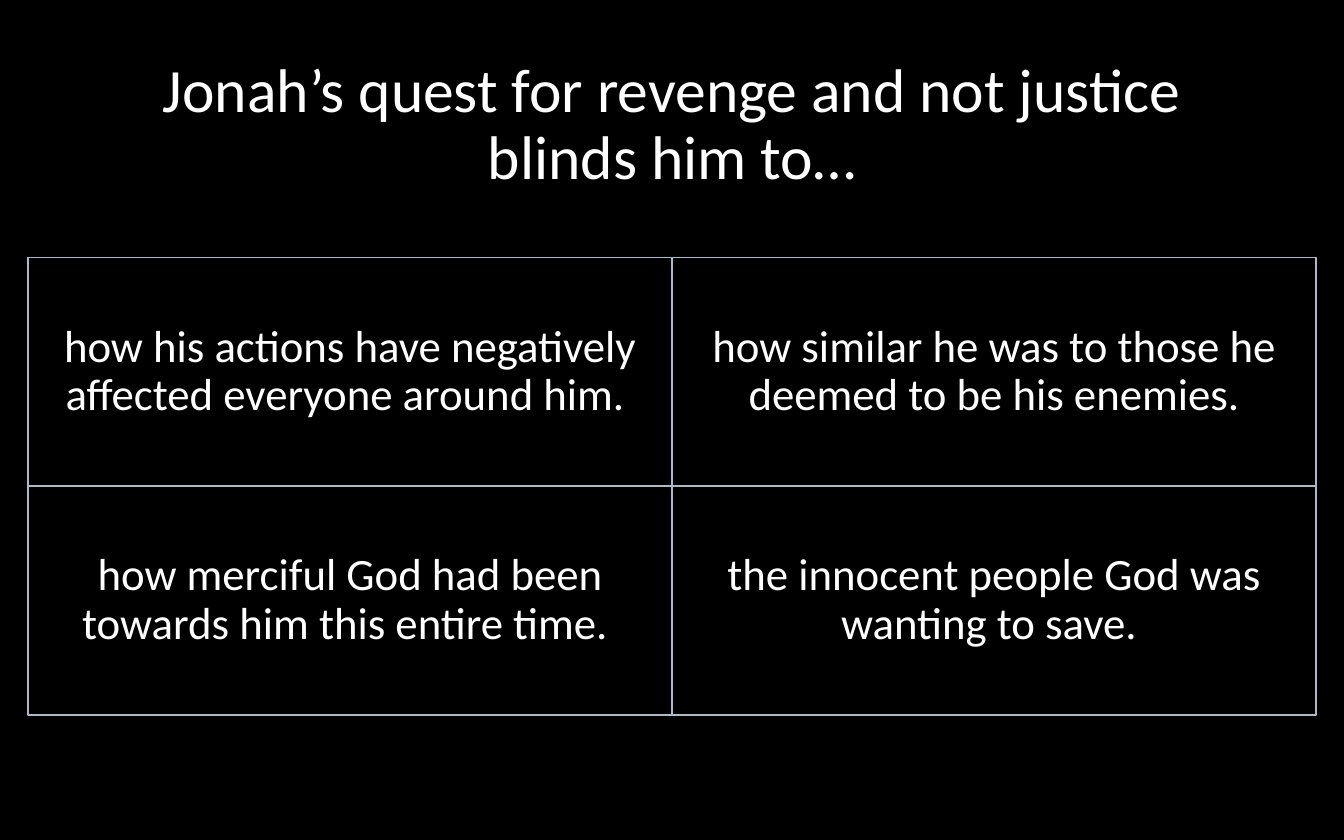
from dataclasses import dataclass
from pptx import Presentation
from pptx.dml.color import RGBColor as Rgb
from pptx.enum.shapes import MSO_SHAPE as Kind
from pptx.enum.text import MSO_ANCHOR as Anchor, PP_ALIGN as Align
from pptx.util import Pt


@dataclass(frozen=True)
class Theme:
    back: Rgb = Rgb(0, 0, 0)
    ink: Rgb = Rgb(255, 255, 255)
    rule: Rgb = Rgb(0xAD, 0xB9, 0xCA)
    font: str = "Calibri"
    head: float = 33
    body: float = 24
    line: float = 0.75


THEME = Theme()
WIDTH, HEIGHT = 720, 450
TITLE = "Jonah’s quest for revenge and not justice blinds him to…"
POINTS = [
    ["how his actions have negatively affected everyone around him. ",
     "how similar he was to those he deemed to be his enemies."],
    ["how merciful God had been towards him this entire time. ",
     "the innocent people God was wanting to save. "],
]


def write(shape, text, *, size, before=0):
    """Fill a shape with one centred paragraph."""
    frame = shape.text_frame
    frame.word_wrap = True
    frame.vertical_anchor = Anchor.MIDDLE
    para = frame.paragraphs[0]
    para.alignment = Align.CENTER
    para.line_spacing = 0.9
    para.space_before = Pt(before)
    run = para.add_run()
    run.text = text
    run.font.name = THEME.font
    run.font.size = Pt(size)
    run.font.color.rgb = THEME.ink


def add_title(slide, box, text):
    shape = slide.shapes.add_textbox(*map(Pt, box))
    write(shape, text, size=THEME.head)


def add_grid(slide, box, rows):
    """Split the box into equal outlined cells."""
    left, top, width, height = box
    high = height / len(rows)
    for i, row in enumerate(rows):
        wide = width / len(row)
        for j, text in enumerate(row):
            place = (left + j * wide, top + i * high, wide, high)
            cell = slide.shapes.add_shape(Kind.RECTANGLE, *map(Pt, place))
            cell.shadow.inherit = False
            cell.fill.background()
            cell.line.color.rgb = THEME.rule
            cell.line.width = Pt(THEME.line)
            write(cell, text, size=THEME.body, before=7.5)


def main():
    deck = Presentation()
    deck.slide_width, deck.slide_height = Pt(WIDTH), Pt(HEIGHT)
    slide = deck.slides.add_slide(deck.slide_layouts[6])

    # Background
    fill = slide.background.fill
    fill.solid()
    fill.fore_color.rgb = THEME.back

    # Title above the grid of points, both centred on the slide
    edge, side = 49.5, 15
    add_title(slide, (edge, 24, WIDTH - 2 * edge, 87), TITLE)
    add_grid(slide, (side, 138, WIDTH - 2 * side, 245), POINTS)

    deck.save("out.pptx")


if __name__ == "__main__":
    main()
